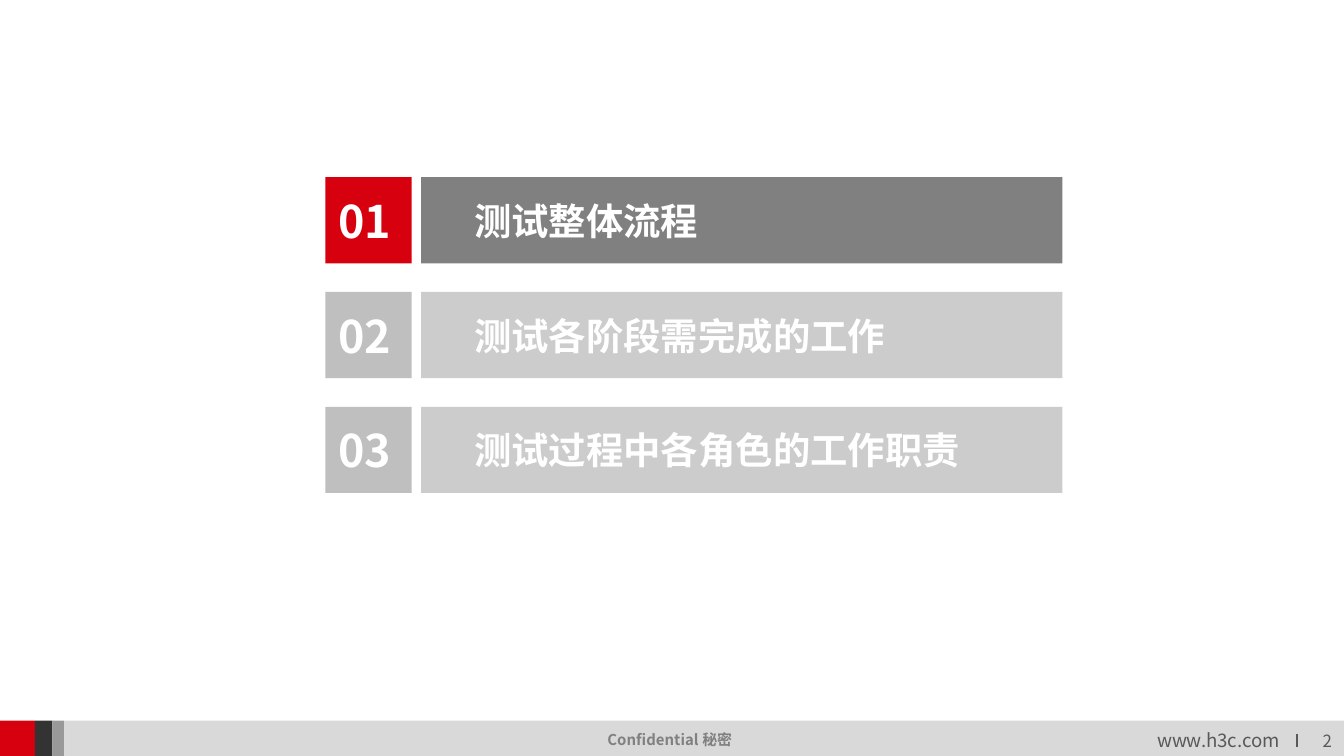
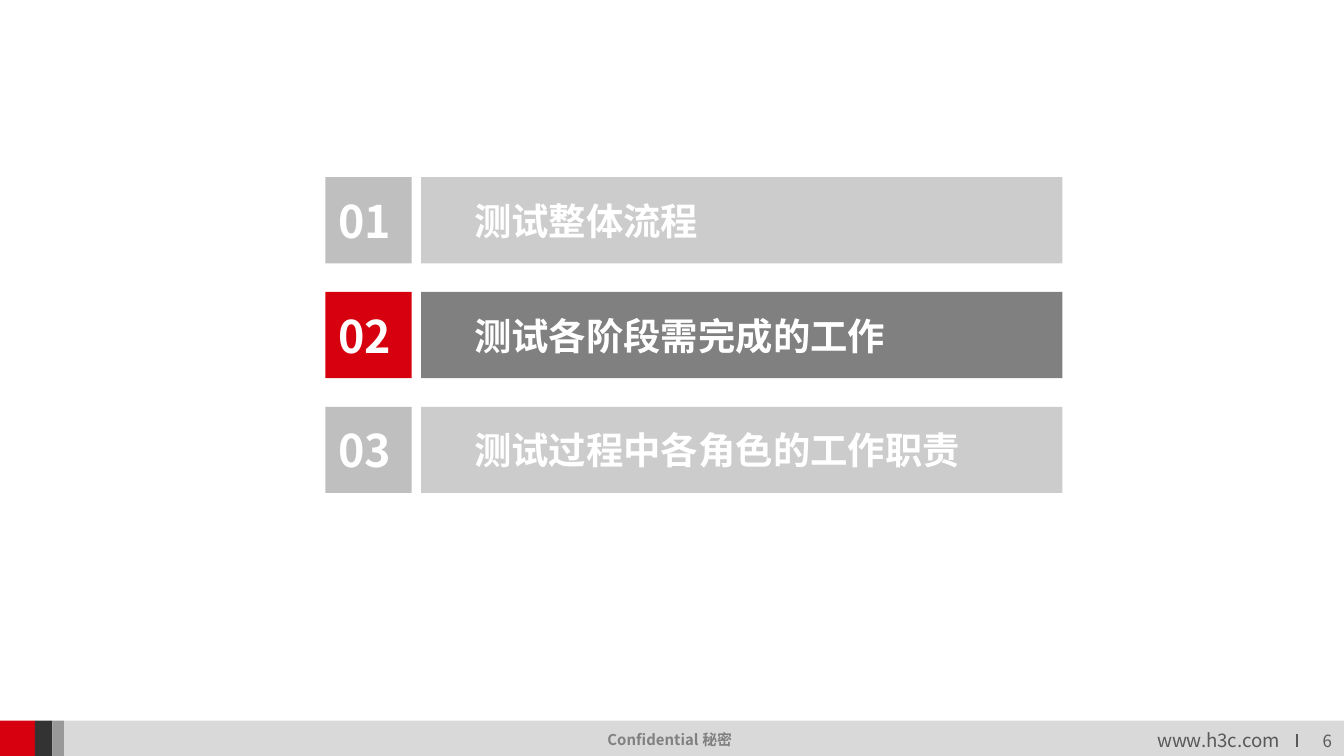
from dataclasses import dataclass

from lxml.etree import SubElement
from pptx import Presentation
from pptx.dml.color import RGBColor
from pptx.enum.shapes import MSO_CONNECTOR, MSO_SHAPE
from pptx.enum.text import MSO_ANCHOR, PP_ALIGN
from pptx.oxml.ns import qn
from pptx.util import Cm, Pt

TOPICS = ["测试整体流程", "测试各阶段需完成的工作", "测试过程中各角色的工作职责"]
SLIDES = [{"page": 2, "active": 0}, {"page": 6, "active": 1}]
SITE = "www.h3c.com"
MARK = "Confidential 秘密"


@dataclass(frozen=True)
class Theme:
    font: str = "Noto Sans CJK SC"
    red: str = "D7000F"
    dark: str = "333333"
    mid: str = "999999"
    band: str = "D9D9D9"
    ink: str = "595959"
    mark: str = "808080"
    live: str = "808080"
    white: str = "FFFFFF"
    idle_num: str = "BFBFBF"
    idle_bar: str = "CCCCCC"
    num_size: int = 24
    bar_size: int = 20
    site_size: int = 10
    page_size: int = 9
    mark_size: int = 8


THEME = Theme()
WIDE, HIGH = 25.4, 14.29
FOOT_TOP, FOOT_HIGH = 13.62, 0.67
STRIPES = [(0.66, THEME.red), (0.33, THEME.dark), (0.23, THEME.mid)]
NUM_LEFT, BAR_LEFT, BAR_WIDE = 6.15, 7.96, 12.12
ROW_TOP, ROW_STEP, ROW_HIGH = 3.35, 2.17, 1.63


def rgb(code):
    return RGBColor.from_string(code)


def box(slide, spot, fill):
    shape = slide.shapes.add_shape(MSO_SHAPE.RECTANGLE, *map(Cm, spot))
    shape.shadow.inherit = False
    shape.fill.solid()
    shape.fill.fore_color.rgb = rgb(fill)
    shape.line.fill.background()
    return shape


def write(shape, text, size, color, bold=False, align=PP_ALIGN.LEFT, **frame):
    """Put one styled line in a shape; frame holds text frame settings."""
    body = shape.text_frame
    for key, val in {"vertical_anchor": MSO_ANCHOR.MIDDLE, "word_wrap": True, **frame}.items():
        setattr(body, key, val)
    para = body.paragraphs[0]
    para.alignment = align
    run = para.add_run()
    run.text = text
    for key, val in {"name": THEME.font, "size": Pt(size), "bold": bold}.items():
        setattr(run.font, key, val)
    run.font.color.rgb = rgb(color)
    # East Asian text takes its own typeface element
    SubElement(run.font._element, qn("a:ea"), typeface=THEME.font)


def label(slide, spot, *style, **frame):
    write(slide.shapes.add_textbox(*map(Cm, spot)), *style, **frame)


def footer(slide, page):
    left = 0
    for wide, fill in STRIPES:
        box(slide, (left, FOOT_TOP, wide, FOOT_HIGH), fill)
        left += wide
    box(slide, (left, FOOT_TOP, WIDE - left, FOOT_HIGH), THEME.band)

    label(slide, (21.62, 13.64, 2.87, 0.68), SITE, THEME.site_size, THEME.ink, word_wrap=False)
    label(slide, (11.23, 13.68, 2.95, 0.6), MARK, THEME.mark_size, THEME.mark,
          bold=True, word_wrap=False)
    label(slide, (24.3, 13.67, 1.12, 0.6), str(page), THEME.page_size, THEME.ink,
          align=PP_ALIGN.RIGHT, margin_top=Cm(0.2))

    rule = slide.shapes.add_connector(
        MSO_CONNECTOR.STRAIGHT, *map(Cm, (24.51, 13.87, 24.51, 14.12)))
    rule.line.color.rgb = rgb(THEME.ink)
    rule.line.width = Pt(0.75)
    SubElement(rule._element.spPr, qn("a:effectLst"))


def agenda(slide, active):
    for row, topic in enumerate(TOPICS):
        top = ROW_TOP + row * ROW_STEP
        live = row == active
        num = box(slide, (NUM_LEFT, top, ROW_HIGH, ROW_HIGH),
                  THEME.red if live else THEME.idle_num)
        write(num, f"{row + 1:02}", THEME.num_size, THEME.white, bold=True)
        bar = box(slide, (BAR_LEFT, top, BAR_WIDE, ROW_HIGH),
                  THEME.live if live else THEME.idle_bar)
        write(bar, topic, THEME.bar_size, THEME.white, bold=True, margin_left=Cm(1))


def main():
    deck = Presentation()
    deck.slide_width, deck.slide_height = Cm(WIDE), Cm(HIGH)
    blank = deck.slide_layouts.get_by_name("Blank")
    for item in SLIDES:
        slide = deck.slides.add_slide(blank)
        footer(slide, item["page"])
        agenda(slide, item["active"])
    deck.save("out.pptx")


if __name__ == "__main__":
    main()
